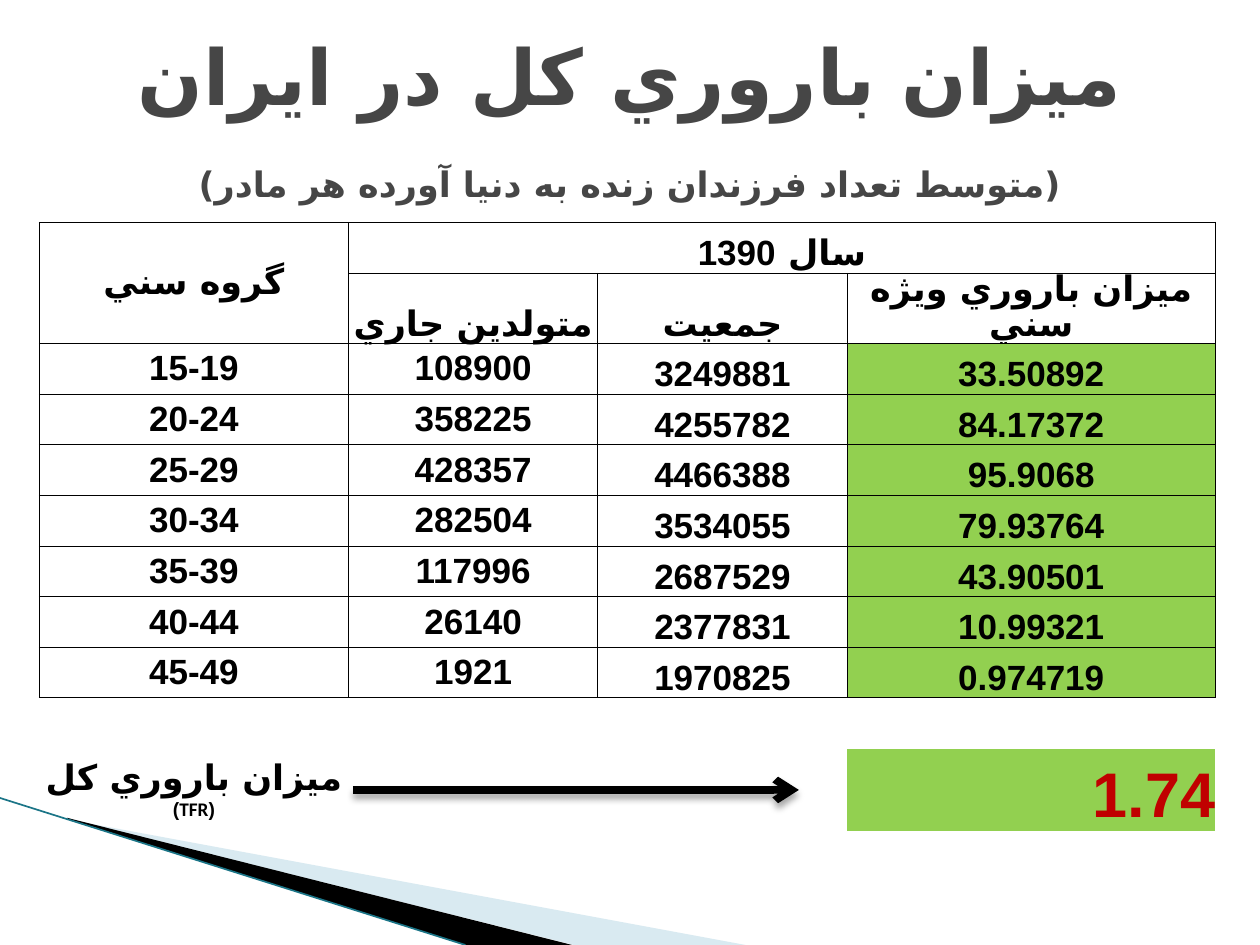
"""Build a slide with a table of age-specific fertility rates and the total fertility rate."""
from lxml import etree
from pptx import Presentation
from pptx import util as u
from pptx.dml.color import RGBColor
from pptx.enum import shapes, text
from pptx.oxml.ns import qn

COLORS = {"black": "000000", "title": "464646", "green": "92D050", "red": "C00000",
          "pale": "A0CBDC", "teal": "1B7587"}
PERSIAN, DIGITS = "DejaVu Sans", "Arial"
TITLE = [("ميزان باروري كل در ايران", 44, 0),
         ("(متوسط تعداد فرزندان زنده به دنيا آورده هر مادر)", 20, 23.5)]
AGE_HEADER = "گروه سني"
YEAR_HEADER = [("سال ", 20, "Arial", PERSIAN), ("1390", 20, "Arial", DIGITS)]
SUBHEADERS = ["متولدين جاري", "جمعيت", "ميزان باروري ويژه سني"]
RATES = [
    ("15-19", "108900", "3249881", "33.50892"),
    ("20-24", "358225", "4255782", "84.17372"),
    ("25-29", "428357", "4466388", "95.9068"),
    ("30-34", "282504", "3534055", "79.93764"),
    ("35-39", "117996", "2687529", "43.90501"),
    ("40-44", "26140", "2377831", "10.99321"),
    ("45-49", "1921", "1970825", "0.974719"),
]
TOTAL_LABEL = [("ميزان باروري كل ", 20, "Calibri", PERSIAN),
               ("(TFR)", 11, "Calibri", DIGITS)]
TOTAL = "1.74"
COL_WIDTHS = [176.6, 142.5, 142.5, 210.4]
ROW_HEIGHTS = [29.2, 40] + [28.95] * 8 + [47.2]
SWOOSHES = [
    ("pale", 40, [(39.6, 468.5), (426, 540), (328, 540), (39.6, 468)]),
    ("black", 100, [(38.2, 467.3), (327, 540), (266, 540), (38.9, 468)]),
]
MIDDLE, BOTTOM = text.MSO_ANCHOR.MIDDLE, text.MSO_ANCHOR.BOTTOM
CENTER, RIGHT = text.PP_ALIGN.CENTER, text.PP_ALIGN.RIGHT


def rgb(name):
    return RGBColor.from_string(COLORS[name])


def style(font, size, name, script, color="black"):
    font.size, font.bold, font.name = u.Pt(size), True, name
    font.color.rgb = rgb(color)
    etree.SubElement(font._rPr, qn("a:cs"), typeface=script)


def set_rtl(p, align=CENTER):
    p.alignment = align
    p._p.get_or_add_pPr().set("rtl", "1")


def add_swoosh(s, color, alpha, points):
    points = [(u.Pt(x), u.Pt(y)) for x, y in points]
    builder = s.shapes.build_freeform(*points[0], scale=1.0)
    builder.add_line_segments(points[1:], close=True)
    sp = builder.convert_to_shape()
    sp.shadow.inherit = False
    sp.line.fill.background()
    sp.fill.solid()
    sp.fill.fore_color.rgb = rgb(color)
    if alpha < 100:
        clr = sp._element.spPr.find(qn("a:solidFill"))[0]
        etree.SubElement(clr, qn("a:alpha"), val=str(alpha * 1000))


def add_line(s, start, end, color, width):
    line = s.shapes.add_connector(shapes.MSO_CONNECTOR.STRAIGHT,
                                  *(u.Pt(v) for v in start + end))
    line.line.color.rgb = rgb(color)
    line.line.width = u.Pt(width)
    return line, etree.SubElement(line._element.spPr, qn("a:effectLst"))


def add_arrow(s, start, end):
    line, effects = add_line(s, start, end, "black", 4.33)
    etree.SubElement(line.line._get_or_add_ln(), qn("a:tailEnd"), type="arrow")
    shadow = etree.SubElement(effects, qn("a:outerShdw"), blurRad=str(u.Pt(4)),
                              dist=str(u.Pt(3)), dir="5400000", rotWithShape="0")
    clr = etree.SubElement(shadow, qn("a:srgbClr"), val=COLORS["black"])
    etree.SubElement(clr, qn("a:alpha"), val="35000")


def set_borders(cell, edges):
    tcPr = cell._tc.get_or_add_tcPr()
    for i, edge in enumerate(("L", "R", "T", "B")):
        ln = etree.Element(qn("a:ln" + edge), w=str(u.Pt(0.5)))
        if edge in edges:
            fill = etree.SubElement(ln, qn("a:solidFill"))
            etree.SubElement(fill, qn("a:srgbClr"), val=COLORS["black"])
        else:
            etree.SubElement(ln, qn("a:noFill"))
        tcPr.insert(i, ln)


def start_cell(cell, anchor, align=CENTER):
    cell.vertical_anchor = anchor
    p = cell.text_frame.paragraphs[0]
    set_rtl(p, align)
    return p


def write_cell(cell, words, anchor, script, font="Arial", size=20, color="black", align=CENTER):
    p = start_cell(cell, anchor, align)
    p.text = words
    style(p.font, size, font, script, color)
    return p


def write_runs(cell, runs, anchor):
    p = start_cell(cell, anchor)
    for words, size, font, script in runs:
        r = p.add_run()
        r.text = words
        style(r.font, size, font, script)


def add_rates(s):
    n_rows, n_cols = len(ROW_HEIGHTS), len(COL_WIDTHS)
    table = s.shapes.add_table(n_rows, n_cols, u.Pt(22.5), u.Pt(127),
                               u.Pt(sum(COL_WIDTHS)), u.Pt(sum(ROW_HEIGHTS))).table
    table.first_row = table.horz_banding = False
    for column, width in zip(table.columns, COL_WIDTHS):
        column.width = u.Pt(width)
    for row, height in zip(table.rows, ROW_HEIGHTS):
        row.height = u.Pt(height)

    last, gap = n_rows - 1, n_rows - 2
    for r in range(n_rows):
        for c in range(n_cols):
            cell = table.cell(r, c)
            cell.margin_left = cell.margin_right = cell.margin_top = cell.margin_bottom = 0
            if c == n_cols - 1 and r > 1 and r != gap:
                cell.fill.solid()
                cell.fill.fore_color.rgb = rgb("green")
            else:
                cell.fill.background()
            set_borders(cell, "LRTB" if r < gap else "T" if r == gap else "")

    table.cell(0, 0).merge(table.cell(1, 0))
    table.cell(0, 1).merge(table.cell(0, n_cols - 1))
    write_cell(table.cell(0, 0), AGE_HEADER, MIDDLE, PERSIAN)
    write_runs(table.cell(0, 1), YEAR_HEADER, BOTTOM)
    for c, words in enumerate(SUBHEADERS, 1):
        p = write_cell(table.cell(1, c), words, BOTTOM, PERSIAN)
        p.line_spacing = 0.85
    for r, values in enumerate(RATES, 2):
        for c, value in enumerate(values):
            anchor, font = (MIDDLE, "Calibri") if c < 2 else (BOTTOM, "Arial")
            write_cell(table.cell(r, c), value, anchor, DIGITS, font)
    write_runs(table.cell(last, 0), TOTAL_LABEL, MIDDLE)
    write_cell(table.cell(last, n_cols - 1), TOTAL, BOTTOM, DIGITS,
               size=36, color="red", align=RIGHT)


def add_title(s):
    box = s.shapes.add_textbox(u.Pt(36), u.Pt(21.6), u.Pt(648), u.Pt(90))
    tf = box.text_frame
    tf.word_wrap = True
    tf.vertical_anchor = MIDDLE
    for i, (words, size, before) in enumerate(TITLE):
        p = tf.add_paragraph() if i else tf.paragraphs[0]
        set_rtl(p)
        p.text = words
        if before:
            p.space_before = u.Pt(before)
        style(p.font, size, "Calibri", PERSIAN, "title")


def main():
    prs = Presentation()
    prs.slide_width, prs.slide_height = u.Pt(720), u.Pt(540)
    s = prs.slides.add_slide(prs.slide_layouts[6])
    for swoosh in SWOOSHES:
        add_swoosh(s, *swoosh)
    add_line(s, (0, 456), (266, 540), "teal", 0.95)
    add_rates(s)
    add_title(s)
    add_arrow(s, (201.6, 451.4), (456.5, 451.4))
    prs.save("out.pptx")


if __name__ == "__main__":
    main()
